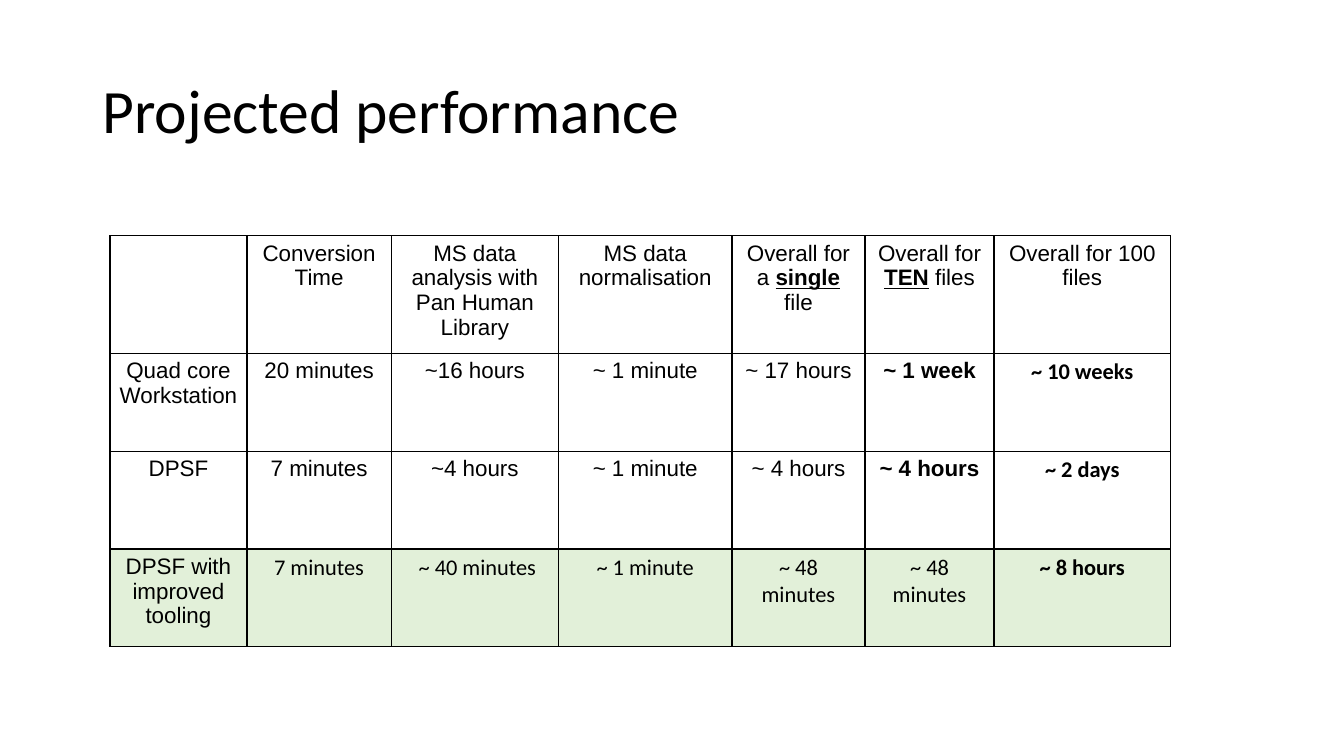
from dataclasses import dataclass

from lxml import etree
from pptx import Presentation
from pptx.dml.color import RGBColor
from pptx.enum.text import MSO_ANCHOR, PP_ALIGN
from pptx.oxml.ns import qn
from pptx.table import _Cell
from pptx.util import Inches, Pt

CENTER = PP_ALIGN.CENTER
MIDDLE = MSO_ANCHOR.MIDDLE
BORDER_SIDES = ("a:lnL", "a:lnR", "a:lnT", "a:lnB")


@dataclass(frozen=True)
class Theme:
    ink: str = "000000"
    highlight: str = "E2F0D9"
    heading_font: str = "Calibri"
    table_font: str = "Arial"
    title_size: int = 44
    table_size: int = 16
    border_width: int = 1


@dataclass(frozen=True)
class Span:
    text: str
    bold: bool = False
    underline: bool = False


@dataclass(frozen=True)
class Entry:
    spans: tuple[Span, ...]
    font: str


THEME = Theme()


def plain(text: str) -> Entry:
    return Entry((Span(text),), THEME.table_font)


def strong(text: str, font: str = THEME.table_font) -> Entry:
    return Entry((Span(text, bold=True),), font)


def light(text: str) -> Entry:
    return Entry((Span(text),), THEME.heading_font)


def stressed(before: str, word: str, after: str) -> Entry:
    return Entry((Span(before), Span(word, True, True), Span(after)), THEME.table_font)


COLUMN_WIDTHS = (1.36, 1.43, 1.66, 1.72, 1.32, 1.28, 1.75)
ROW_HEIGHT = 0.97
ROWS = (
    (
        plain(""),
        plain("Conversion Time"),
        plain("MS data analysis with Pan Human Library"),
        plain("MS data normalisation"),
        stressed("Overall for a ", "single", " file"),
        stressed("Overall for ", "TEN", " files"),
        plain("Overall for 100 files"),
    ),
    (
        plain("Quad core Workstation"),
        plain("20 minutes"),
        plain("~16 hours"),
        plain("~ 1 minute"),
        plain("~ 17 hours"),
        strong("~ 1 week"),
        strong("~ 10 weeks", THEME.heading_font),
    ),
    (
        plain("DPSF"),
        plain("7 minutes"),
        plain("~4 hours"),
        plain("~ 1 minute"),
        plain("~ 4 hours"),
        strong("~ 4 hours"),
        strong("~ 2 days", THEME.heading_font),
    ),
    (
        plain("DPSF with improved tooling"),
        light("7 minutes"),
        light(" ~ 40 minutes"),
        light("~ 1 minute"),
        light("~ 48 minutes"),
        light("~ 48 minutes"),
        strong("~ 8 hours", THEME.heading_font),
    ),
)
HIGHLIGHTED_ROW = len(ROWS) - 1


def style_font(font, name: str, size: int) -> None:
    font.name = name
    font.size = Pt(size)
    font.color.rgb = RGBColor.from_string(THEME.ink)


def add_title(slide, text: str) -> None:
    s = slide.shapes.add_textbox(Inches(0.92), Inches(0.4), Inches(11.5), Inches(1.45))
    tf = s.text_frame
    tf.word_wrap = True
    tf.vertical_anchor = MIDDLE
    p = tf.paragraphs[0]
    p.text = text
    p.line_spacing = 0.9
    style_font(p.runs[0].font, THEME.heading_font, THEME.title_size)


def set_borders(cell: _Cell) -> None:
    props = cell._tc.get_or_add_tcPr()
    for side in BORDER_SIDES:
        ln = etree.SubElement(props, qn(side), w=str(Pt(THEME.border_width)))
        fill = etree.SubElement(ln, qn("a:solidFill"))
        etree.SubElement(fill, qn("a:srgbClr"), val=THEME.ink)


def fill_cell(cell: _Cell, entry: Entry, highlighted: bool) -> None:
    cell.margin_left = cell.margin_right = Inches(0.09)
    cell.margin_top = cell.margin_bottom = Inches(0.05)
    set_borders(cell)
    if highlighted:
        cell.fill.solid()
        cell.fill.fore_color.rgb = RGBColor.from_string(THEME.highlight)
    else:
        cell.fill.background()
    p = cell.text_frame.paragraphs[0]
    p.alignment = CENTER
    for span in entry.spans:
        if not span.text:
            continue
        r = p.add_run()
        r.text = span.text
        style_font(r.font, entry.font, THEME.table_size)
        r.font.bold = span.bold
        r.font.underline = span.underline


def add_performance_table(slide) -> None:
    frame = slide.shapes.add_table(
        len(ROWS), len(COLUMN_WIDTHS), Inches(1.09), Inches(2.34),
        Inches(sum(COLUMN_WIDTHS)), Inches(ROW_HEIGHT * len(ROWS)),
    )
    table = frame.table
    table.first_row = False
    table.horz_banding = False
    for column, width in zip(table.columns, COLUMN_WIDTHS):
        column.width = Inches(width)
    for i, entries in enumerate(ROWS):
        table.rows[i].height = Inches(ROW_HEIGHT)
        for j, entry in enumerate(entries):
            fill_cell(table.cell(i, j), entry, i == HIGHLIGHTED_ROW)


def main() -> None:
    prs = Presentation()
    prs.slide_width = Inches(13.33)
    prs.slide_height = Inches(7.5)
    slide = prs.slides.add_slide(prs.slide_layouts[6])
    add_title(slide, "Projected performance")
    add_performance_table(slide)
    prs.save("out.pptx")


if __name__ == "__main__":
    main()
